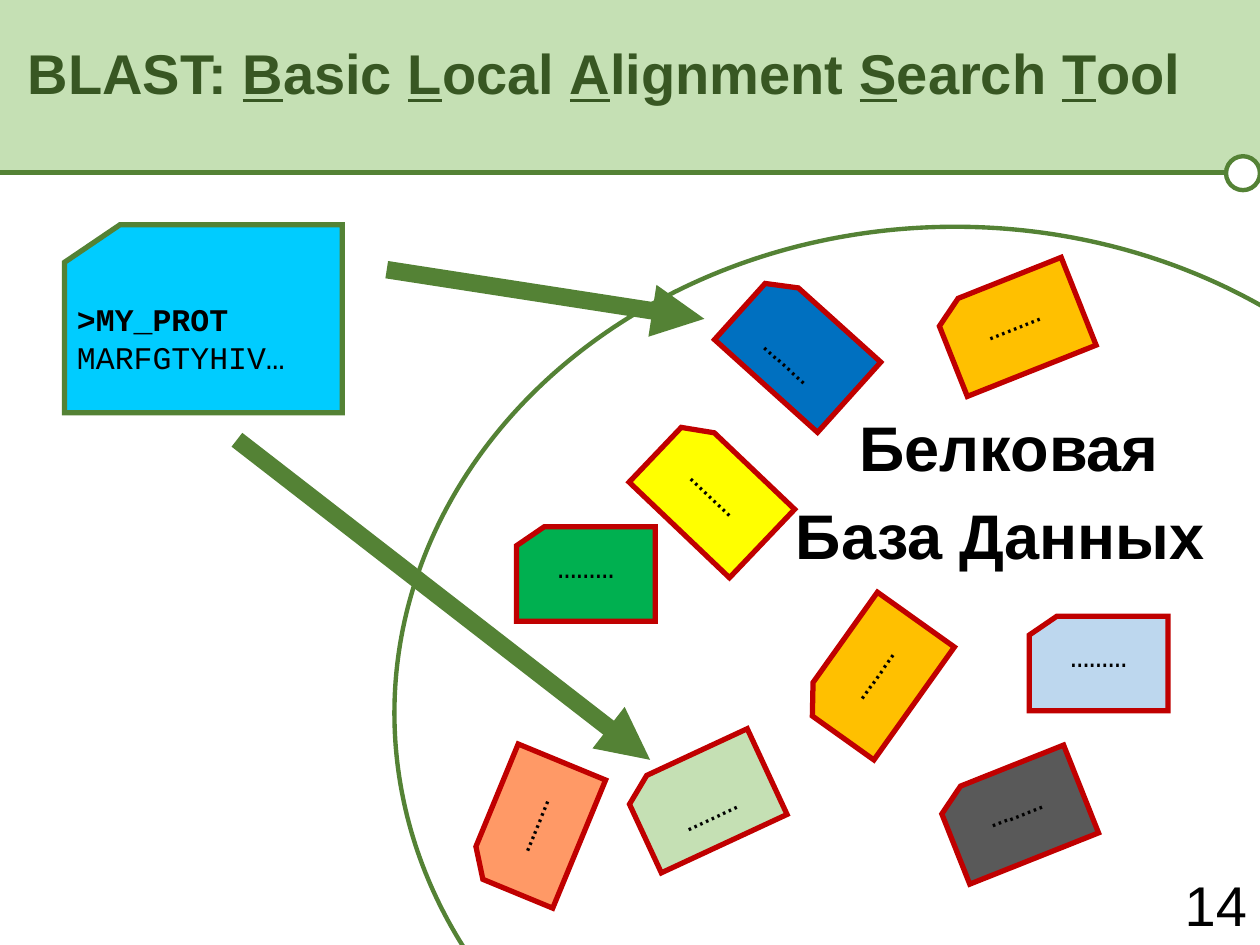
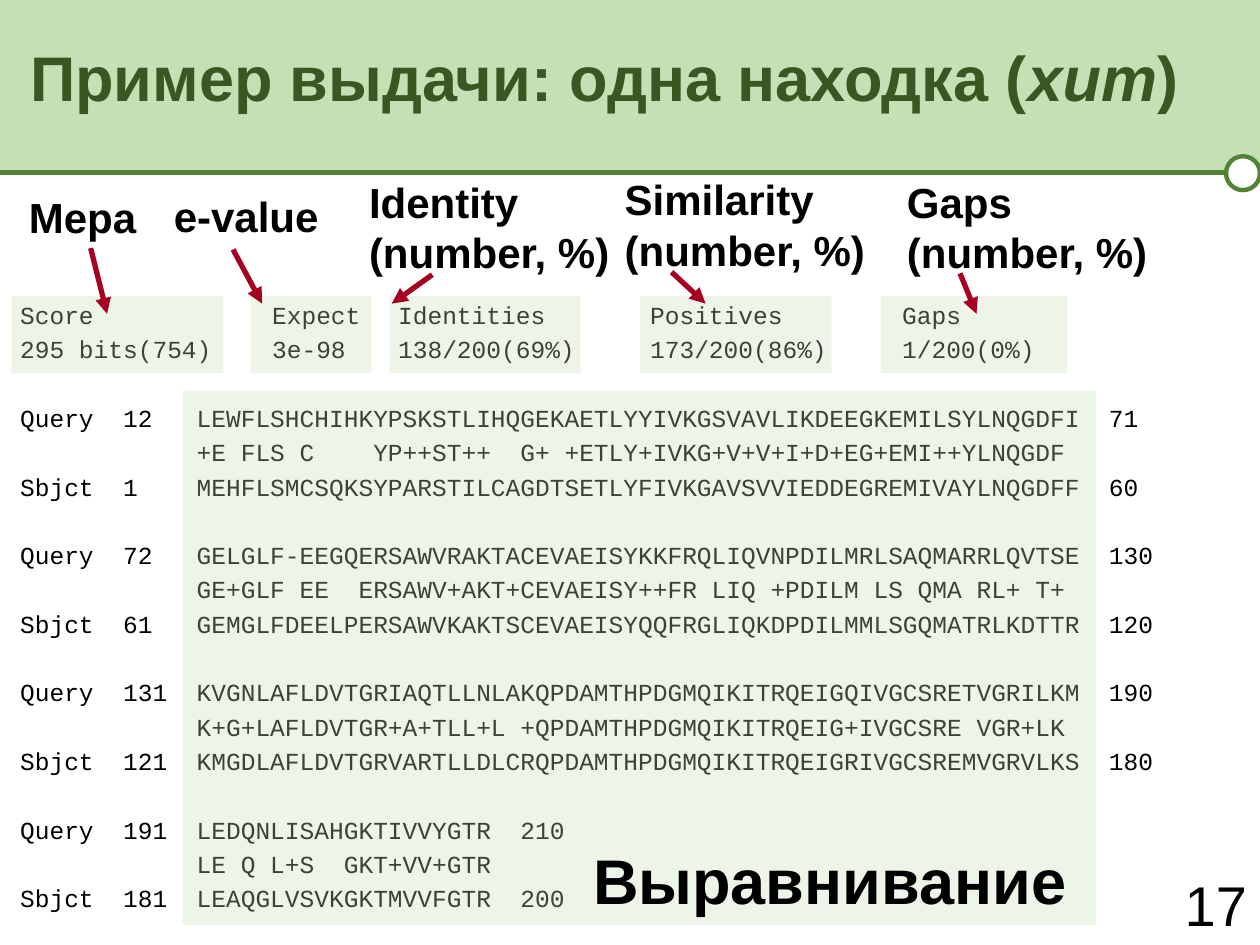
from lxml.etree import SubElement
from pptx import Presentation
from pptx.dml.color import RGBColor
from pptx.enum.shapes import MSO_CONNECTOR, MSO_SHAPE
from pptx.enum.text import MSO_ANCHOR, MSO_AUTO_SIZE, PP_ALIGN
from pptx.oxml.ns import qn
from pptx.util import Pt

COLORS = {
    "band": "C5E0B4", "green": "548235", "title": "385723", "black": "000000",
    "white": "FFFFFF", "card border": "C00000", "label arrow": "A50021",
    "query": "00CCFF", "yellow": "FFFF00", "amber": "FFC000", "emerald": "00B050",
    "blue": "0070C0", "salmon": "FF9966", "gray": "595959", "pale blue": "BDD7EE",
}
SANS, MONO = "Arial", "Courier New"


def add_figure(slide, kind, box, fill=None, line=None, width=2.5, arrow=False):
    """Add a shape in box (left, top, width, height), or a line if kind is None
    and box holds its start and end points."""
    lengths = [Pt(value) for value in box]
    if kind is None:
        figure = slide.shapes.add_connector(MSO_CONNECTOR.STRAIGHT, *lengths)
    else:
        figure = slide.shapes.add_shape(kind, *lengths)
        figure.shadow.inherit = False
        figure.fill.solid()
        figure.fill.fore_color.rgb = RGBColor.from_string(COLORS[fill])
    if line:
        figure.line.color.rgb = RGBColor.from_string(COLORS[line])
        figure.line.width = Pt(width)
        outline = figure.line._get_or_add_ln()
        SubElement(outline, qn("a:miter"), lim="800000")
        if arrow:
            SubElement(outline, qn("a:tailEnd"), type="triangle")
    else:
        figure.line.fill.background()
    if kind is None:
        SubElement(figure._element.spPr, qn("a:effectLst"))
    return figure


def write(shape, paragraphs, size, font=SANS, color="black", align=PP_ALIGN.LEFT,
          anchor=MSO_ANCHOR.TOP, wrap=True, before=0):
    """Fill a shape; each paragraph is a list of (text, styles), styles from "biu"."""
    frame = shape.text_frame
    frame.auto_size = MSO_AUTO_SIZE.NONE
    frame.word_wrap = wrap
    frame.vertical_anchor = anchor
    for index, runs in enumerate(paragraphs):
        paragraph = frame.add_paragraph() if index else frame.paragraphs[0]
        paragraph.alignment = align
        paragraph.space_before = Pt(before)
        for text, styles in runs:
            run = paragraph.add_run()
            run.text = text
            run.font.name = font
            run.font.size = Pt(size)
            run.font.bold = "b" in styles
            run.font.italic = "i" in styles
            run.font.underline = "u" in styles
            run.font.color.rgb = RGBColor.from_string(COLORS[color])
    return frame


presentation = Presentation()
presentation.slide_width, presentation.slide_height = Pt(720), Pt(540)
layouts = presentation.slide_layouts
search_slide = presentation.slides.add_slide(layouts[5])
hit_slide = presentation.slides.add_slide(layouts[1])

# Search slide: protein database
add_figure(search_slide, MSO_SHAPE.OVAL, (225.4, 129.6, 640.8, 555.8), "white", "green")
database_label = search_slide.shapes.add_textbox(Pt(432), Pt(229.7), Pt(289.4), Pt(51))
write(database_label, [[("Белковая", "b")], [("База Данных ", "b")]], 36,
      align=PP_ALIGN.CENTER, before=7.2)

query_card = add_figure(search_slide, MSO_SHAPE.FLOWCHART_CARD,
                        (36.9, 128.4, 158.6, 107.5), "query", "green", 3)
write(query_card, [[(">MY_PROT", "b")], [("MARFGTYHIV…", "")]], 18, MONO,
      anchor=MSO_ANCHOR.MIDDLE)

# left, top, rotation, fill, text raised above the middle
protein_cards = [
    (367.2, 256.3, 43.6, "yellow", True),
    (460.8, 359.3, 305.5, "amber", True),
    (295.2, 301, 0, "emerald", True),
    (416.2, 173.5, 42, "blue", False),
    (362.9, 430.6, 335.1, "band", False),
    (266.4, 445, 292.4, "salmon", True),
    (540, 159.8, 338.3, "amber", True),
    (541.4, 438.5, 338.3, "gray", True),
    (588.2, 352.1, 0, "pale blue", True),
]
for left, top, rotation, fill, raised in protein_cards:
    card = add_figure(search_slide, MSO_SHAPE.FLOWCHART_CARD, (left, top, 79.2, 54),
                      fill, "card border", 3)
    card.rotation = rotation
    frame = write(card, [[("………", "")]], 18, MONO, align=PP_ALIGN.CENTER,
                  anchor=MSO_ANCHOR.MIDDLE)
    if raised:
        frame.margin_bottom = Pt(24)

for ends in [(221, 154.1, 402.5, 182.2), (135.4, 251.3, 371.5, 434.2)]:
    add_figure(search_slide, None, ends, line="green", width=10, arrow=True)

# Hit slide: alignment listing
listing = [
    "Score\t\tExpect\tIdentities\tPositives\tGaps",
    "295 bits(754)\t3e-98\t138/200(69%)\t173/200(86%)\t1/200(0%)",
]
# query start, query, query end, matches, subject start, subject, subject end
alignment_blocks = [
    (12, "LEWFLSHCHIHKYPSKSTLIHQGEKAETLYYIVKGSVAVLIKDEEGKEMILSYLNQGDFI", 71,
     "+E FLS C    YP++ST++  G+ +ETLY+IVKG+V+V+I+D+EG+EMI++YLNQGDF",
     1, "MEHFLSMCSQKSYPARSTILCAGDTSETLYFIVKGAVSVVIEDDEGREMIVAYLNQGDFF", 60),
    (72, "GELGLF-EEGQERSAWVRAKTACEVAEISYKKFRQLIQVNPDILMRLSAQMARRLQVTSE", 130,
     "GE+GLF EE  ERSAWV+AKT+CEVAEISY++FR LIQ +PDILM LS QMA RL+ T+",
     61, "GEMGLFDEELPERSAWVKAKTSCEVAEISYQQFRGLIQKDPDILMMLSGQMATRLKDTTR", 120),
    (131, "KVGNLAFLDVTGRIAQTLLNLAKQPDAMTHPDGMQIKITRQEIGQIVGCSRETVGRILKM", 190,
     "K+G+LAFLDVTGR+A+TLL+L +QPDAMTHPDGMQIKITRQEIG+IVGCSRE VGR+LK",
     121, "KMGDLAFLDVTGRVARTLLDLCRQPDAMTHPDGMQIKITRQEIGRIVGCSREMVGRVLKS", 180),
    (191, "LEDQNLISAHGKTIVVYGTR", 210,
     "LE Q L+S  GKT+VV+GTR",
     181, "LEAQGLVSVKGKTMVVFGTR", 200),
]
for query_start, query, query_end, matches, start, subject, end in alignment_blocks:
    for name, first, sequence, last in [("Query", query_start, query, query_end),
                                        ("", "", matches, ""),
                                        ("Sbjct", start, subject, end)]:
        listing.append(f"{name:<7}{first:<5}{sequence}  {last}".rstrip())

body = hit_slide.placeholders[1]
body.left, body.top, body.width, body.height = Pt(4.3), Pt(167.8), Pt(674.6), Pt(373.7)
frame = write(body, [[(line, "")] for line in listing], 14, MONO, before=2.8)
for paragraph, line in zip(frame.paragraphs, listing):
    if line.startswith("Query"):
        paragraph.space_before = Pt(22.4)
    properties = paragraph._p.get_or_add_pPr()
    for name, length in [("marL", 0), ("indent", 0), ("defTabSz", Pt(72))]:
        properties.set(name, str(length))
    SubElement(properties, qn("a:buNone"))

labels = [
    ("Мера", 9.4, 105.8, 85, 36.7),
    ("e-value", 92.2, 105.1, 102.2, 36.7),
    ("Identity (number, %)", 203.8, 97.2, 167.8, 65.5),
    ("Similarity (number, %)", 349.9, 95.8, 167.8, 65.5),
    ("Gaps (number, %)", 511.2, 97.2, 167.8, 65.5),
]
for text, *box in labels:
    label = hit_slide.shapes.add_textbox(*[Pt(value) for value in box])
    write(label, [[(text, "b")]], 24)

summary_highlights = [(left, 169.2, width, 43.9) for left, width in
                      [(6.5, 121), (143.3, 69.1), (222.5, 109.4),
                       (365.8, 109.4), (503.3, 106.6)]]
for box in summary_highlights + [(104.4, 223.2, 522, 305.3)]:
    highlight = add_figure(hit_slide, MSO_SHAPE.RECTANGLE, box, "band")
    color = highlight.fill._xPr.find(qn("a:solidFill"))[0]
    SubElement(color, qn("a:alpha"), val="30000")

alignment_label = hit_slide.shapes.add_textbox(Pt(331.9), Pt(477.4), Pt(301.7), Pt(51))
write(alignment_label, [[("Выравнивание", "b")]], 36)

for ends in [(51.8, 141.8, 61.2, 179.3), (133.2, 142.6, 149.8, 173.5),
             (247, 157, 223.9, 173.5), (383.8, 155.5, 403.2, 173.5),
             (548.6, 156.2, 558, 179.3)]:
    add_figure(hit_slide, None, ends, line="label arrow", width=3, arrow=True)

# Shared band, title and page number
search_title = [("BLAST: ", "b")]
for word in ["Basic ", "Local ", "Alignment ", "Search ", "Tool"]:
    search_title += [(word[0], "bu"), (word[1:], "b")]
hit_title = [("Пример выдачи: одна находка (", "b"), ("хит", "bi"), (")", "b")]

for slide, runs, size, box, number in [
    (search_slide, search_title, 32, (7.9, 18.4, 674.6, 46), "14"),
    (hit_slide, hit_title, 36, (6.8, 18.4, 676.8, 51), "17"),
]:
    add_figure(slide, MSO_SHAPE.RECTANGLE, (0, 0, 720, 98.6), "band")
    add_figure(slide, None, (0, 98.6, 704.9, 98.6), line="green")
    add_figure(slide, MSO_SHAPE.OVAL, (700.6, 89.3, 19.4, 19.4), "white", "green")

    title = slide.shapes.title
    title.left, title.top, title.width, title.height = [Pt(value) for value in box]
    write(title, [runs], size, color="title", align=PP_ALIGN.CENTER, wrap=False)
    title.element.getparent().append(title.element)  # in front of the band

    page_number = slide.shapes.add_textbox(Pt(669.6), Pt(493.9), Pt(50.4), Pt(46))
    write(page_number, [[(number, "")]], 32, align=PP_ALIGN.CENTER, wrap=False)

presentation.save("out.pptx")
